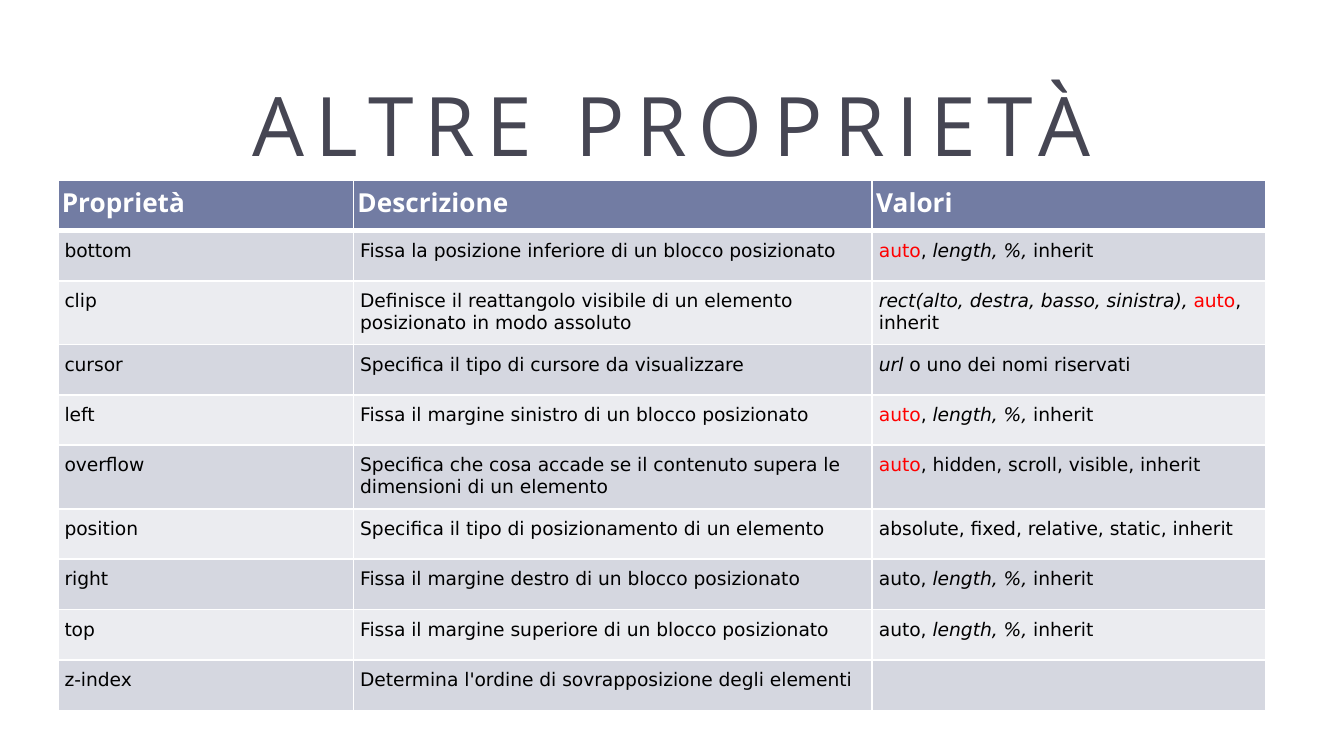
"""Build the slide listing further CSS positioning properties."""
from typing import Any, NamedTuple

import pptx
import pptx.dml.color
import pptx.enum.text
import pptx.oxml.ns
import pptx.util
from lxml import etree

Inches = pptx.util.Inches
Pt = pptx.util.Pt

COLORS = {
    "title": "464653",
    "header": "727CA3",
    "odd": "D5D7E0",
    "even": "EBECF0",
    "white": "FFFFFF",
    "text": "000000",
    "default": "FF0000",
}
TITLE_FONT = {"size": Pt(44), "name": "Open Sans"}
HEADER_FONT = {"size": Pt(14), "name": "Open Sans", "bold": True}
BODY_FONT = {"size": Pt(10), "name": "DejaVu Sans", "bold": False}
SLIDE_WIDTH = 10
SLIDE_HEIGHT = SLIDE_WIDTH * 9 / 16
COLUMN_WIDTHS = (2.2, 3.86, 2.93)
ROW_HEIGHT = 3 / 8
TALL_ROW_HEIGHT = 0.47


class Piece(NamedTuple):
    text: str
    color: str = "text"
    italic: bool = False


class Property(NamedTuple):
    name: str
    description: str
    values: tuple[Piece, ...] = ()
    height: float = ROW_HEIGHT


AUTO = Piece("auto", "default")
LENGTHS = (Piece("length, %, ", italic=True), Piece("inherit"))
DEFAULT_AUTO = (AUTO, Piece(", "), *LENGTHS)
PLAIN_AUTO = (Piece("auto, "), *LENGTHS)

HEADINGS = ("Proprietà", "Descrizione", "Valori")
PROPERTIES = (
    Property("bottom", "Fissa la posizione inferiore di un blocco posizionato", DEFAULT_AUTO),
    Property(
        "clip",
        "Definisce il reattangolo visibile di un elemento posizionato in modo assoluto",
        (Piece("rect(alto, destra, basso, sinistra), ", italic=True), AUTO, Piece(", inherit")),
        TALL_ROW_HEIGHT,
    ),
    Property(
        "cursor",
        "Specifica il tipo di cursore da visualizzare",
        (Piece("url", italic=True), Piece(" o uno dei nomi riservati")),
    ),
    Property("left", "Fissa il margine sinistro di un blocco posizionato", DEFAULT_AUTO),
    Property(
        "overflow",
        "Specifica che cosa accade se il contenuto supera le dimensioni di un elemento",
        (AUTO, Piece(", hidden, scroll, visible, inherit")),
        TALL_ROW_HEIGHT,
    ),
    Property(
        "position",
        "Specifica il tipo di posizionamento di un elemento",
        (Piece("absolute, fixed, relative, static, inherit"),),
    ),
    Property("right", "Fissa il margine destro di un blocco posizionato", PLAIN_AUTO),
    Property("top", "Fissa il margine superiore di un blocco posizionato", PLAIN_AUTO),
    Property("z-index", "Determina l'ordine di sovrapposizione degli elementi"),
)


def apply(target: Any, values: dict[str, Any]) -> None:
    for attribute, value in values.items():
        setattr(target, attribute, value)


def rgb(color: str) -> pptx.dml.color.RGBColor:
    return pptx.dml.color.RGBColor.from_string(COLORS[color])


def write(paragraph: Any, pieces: tuple[Piece, ...], font: dict[str, Any]) -> None:
    for piece in pieces:
        run = paragraph.add_run()
        run.text = piece.text
        apply(run.font, {**font, "italic": piece.italic})
        run.font.color.rgb = rgb(piece.color)


def draw_borders(cell: Any, top: float, bottom: float) -> None:
    properties = cell._tc.get_or_add_tcPr()
    qn = pptx.oxml.ns.qn
    for side, width in {"L": 1, "R": 1, "T": top, "B": bottom}.items():
        line = etree.SubElement(properties, qn(f"a:ln{side}"), w=str(Pt(width)))
        fill = etree.SubElement(line, qn("a:solidFill"))
        etree.SubElement(fill, qn("a:srgbClr"), val=COLORS["white"])


def fill_cell(cell: Any, pieces: tuple[Piece, ...], row: int) -> None:
    is_header = row == 0
    font = HEADER_FONT if is_header else BODY_FONT
    side, vertical = (0.03, 0.03) if is_header else (0.05, 0.07)
    margins = {
        "margin_left": Inches(side),
        "margin_right": Inches(side),
        "margin_top": Inches(vertical),
        "margin_bottom": Inches(vertical),
    }
    apply(cell, margins)
    draw_borders(cell, 3 if row == 1 else 1, 3 if is_header else 1)
    cell.fill.solid()
    cell.fill.fore_color.rgb = rgb("header" if is_header else "odd" if row % 2 else "even")
    paragraph = cell.text_frame.paragraphs[0]
    write(paragraph, pieces, font)
    if not pieces:
        end = etree.SubElement(paragraph._p, pptx.oxml.ns.qn("a:endParaRPr"))
        end.set("sz", str(int(font["size"].pt * 100)))


def draw_title(slide: Any, title: str) -> None:
    frame = slide.shapes.add_textbox(Inches(0.5), Inches(0.45), Inches(9), Inches(0.94)).text_frame
    apply(frame, {"word_wrap": True, "vertical_anchor": pptx.enum.text.MSO_ANCHOR.MIDDLE})
    paragraph = frame.paragraphs[0]
    paragraph.alignment = pptx.enum.text.PP_ALIGN.CENTER
    write(paragraph, (Piece(title, "title"),), TITLE_FONT)
    paragraph.runs[0].font._element.set("spc", "600")


def draw_properties(slide: Any) -> None:
    heights = [ROW_HEIGHT, *(entry.height for entry in PROPERTIES)]
    table = slide.shapes.add_table(
        len(heights), len(COLUMN_WIDTHS),
        Inches(0.43), Inches(1.34), Inches(sum(COLUMN_WIDTHS)), Inches(sum(heights)),
    ).table
    apply(table, {"first_row": False, "horz_banding": False})
    for column, width in zip(table.columns, COLUMN_WIDTHS):
        column.width = Inches(width)
    for row, height in zip(table.rows, heights):
        row.height = Inches(height)
    contents = [tuple((Piece(heading, "white"),) for heading in HEADINGS)]
    contents += [
        ((Piece(entry.name),), (Piece(entry.description),), entry.values) for entry in PROPERTIES
    ]
    for row, cells in enumerate(contents):
        for column, pieces in enumerate(cells):
            fill_cell(table.cell(row, column), pieces, row)


def main() -> None:
    presentation = pptx.Presentation()
    size = {"slide_width": Inches(SLIDE_WIDTH), "slide_height": Inches(SLIDE_HEIGHT)}
    apply(presentation, size)
    slide = presentation.slides.add_slide(presentation.slide_layouts[6])
    draw_title(slide, "ALTRE PROPRIETÀ")
    draw_properties(slide)
    presentation.save("out.pptx")


if __name__ == "__main__":
    main()
